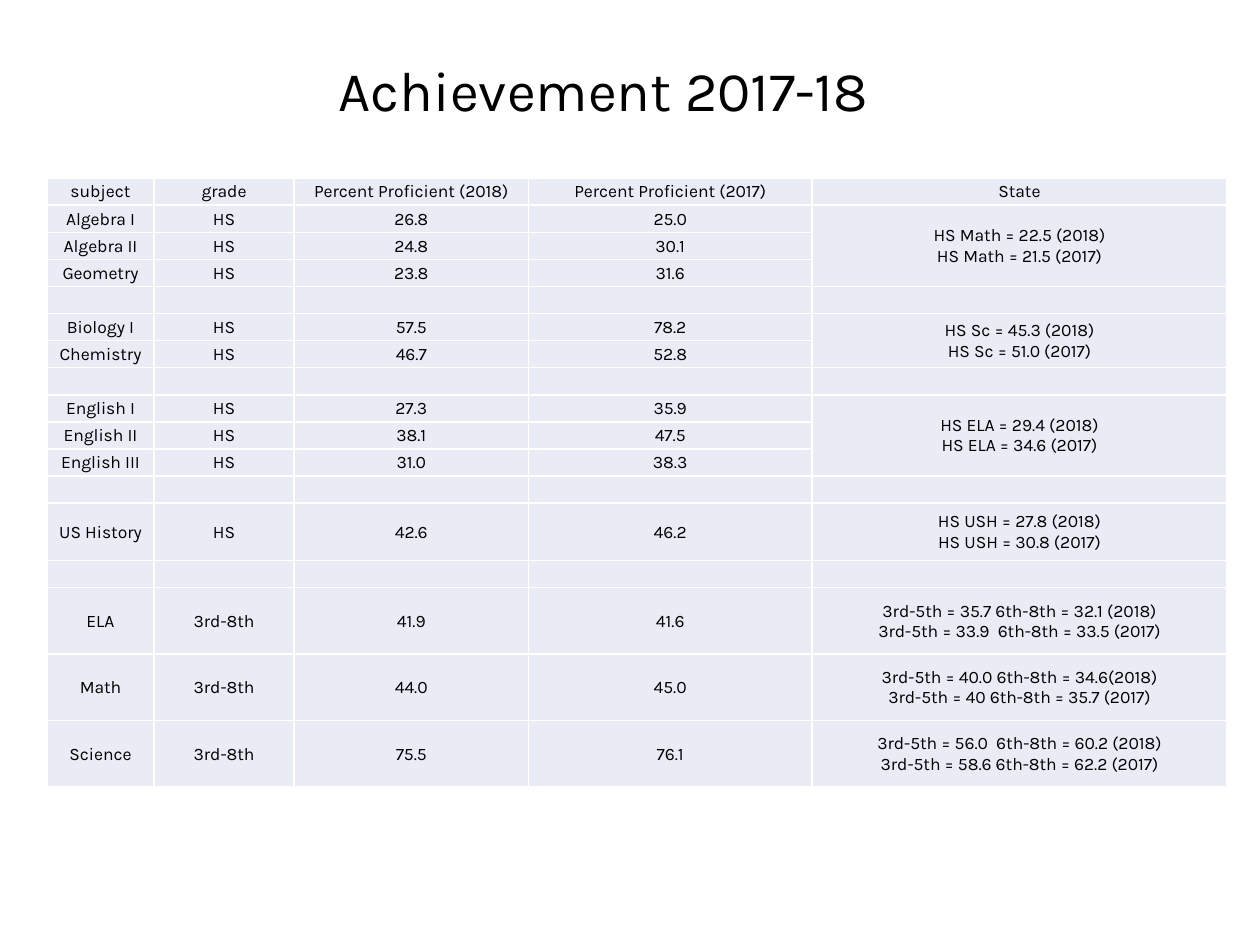
from copy import deepcopy
from dataclasses import dataclass

from lxml.etree import SubElement
from pptx import Presentation
from pptx.dml.color import RGBColor
from pptx.enum.text import MSO_ANCHOR, PP_ALIGN
from pptx.oxml.ns import qn
from pptx.util import Cm, Pt

COLORS = {"text": "000000", "cell": "E9EBF5", "border": "FFFFFF"}
FONT = "Karla"
LINE_H = 7.1 / 13  # the 13 single-line rows share 7.1 cm
COL_WIDTHS = [2.15, 2.83, 4.72, 5.72, 8.36]
STATE_COL = 4


@dataclass
class Row:
    subject: str = ""
    grade: str = ""
    pct_2018: str = ""
    pct_2017: str = ""
    state: str = ""
    span: int = 1
    height: float = LINE_H

    def texts(self) -> list[str]:
        return [self.subject, self.grade, self.pct_2018, self.pct_2017, self.state]


GAP = Row()
ROWS = [
    Row("subject", "grade", "Percent Proficient (2018)", "Percent Proficient (2017)", "State"),
    Row("Algebra I", "HS", "26.8", "25.0", "HS Math = 22.5 (2018)\nHS Math = 21.5 (2017)", span=3),
    Row("Algebra II", "HS", "24.8", "30.1"),
    Row("Geometry", "HS", "23.8", "31.6"),
    GAP,
    Row("Biology I", "HS", "57.5", "78.2", "HS Sc = 45.3 (2018)\nHS Sc = 51.0 (2017)", span=2),
    Row("Chemistry", "HS", "46.7", "52.8"),
    GAP,
    Row("English I", "HS", "27.3", "35.9", "HS ELA = 29.4 (2018)\nHS ELA = 34.6 (2017)", span=3),
    Row("English II", "HS", "38.1", "47.5"),
    Row("English III", "HS", "31.0", "38.3"),
    GAP,
    Row("US History", "HS", "42.6", "46.2", "HS USH = 27.8 (2018)\nHS USH = 30.8 (2017)", height=1.16),
    GAP,
    Row("ELA", "3rd-8th", "41.9", "41.6",
        "3rd-5th = 35.7 6th-8th = 32.1 (2018)\n3rd-5th = 33.9  6th-8th = 33.5 (2017)", height=1.34),
    Row("Math", "3rd-8th", "44.0", "45.0",
        "3rd-5th = 40.0 6th-8th = 34.6(2018)\n3rd-5th = 40 6th-8th = 35.7 (2017)", height=1.34),
    Row("Science", "3rd-8th", "75.5", "76.1",
        "3rd-5th = 56.0  6th-8th = 60.2 (2018)\n3rd-5th = 58.6 6th-8th = 62.2 (2017)", height=1.34),
]


def write(p, text: str, size: int) -> None:
    """Fill a centred paragraph, sizing line breaks and empty text like the runs."""
    p.text = text
    p.alignment = PP_ALIGN.CENTER
    for r in p.runs:
        r.font.name = FONT
        r.font.size = Pt(size)
        r.font.color.rgb = RGBColor.from_string(COLORS["text"])
    for br in p._p.findall(qn("a:br")):
        br.append(deepcopy(p.runs[0]._r.rPr))
    if not text:
        SubElement(p._p, qn("a:endParaRPr"), sz=str(size * 100))


def add_borders(cell) -> None:
    tcPr = cell._tc.get_or_add_tcPr()
    for side in ("lnL", "lnR", "lnT", "lnB"):
        ln = SubElement(tcPr, qn(f"a:{side}"), w=str(Pt(1)))
        fill = SubElement(ln, qn("a:solidFill"))
        SubElement(fill, qn("a:srgbClr"), val=COLORS["border"])


def format_cell(cell, text: str) -> None:
    cell.margin_left = cell.margin_right = cell.margin_top = Cm(0.02)
    cell.margin_bottom = 0
    cell.vertical_anchor = MSO_ANCHOR.MIDDLE
    add_borders(cell)
    cell.fill.solid()
    cell.fill.fore_color.rgb = RGBColor.from_string(COLORS["cell"])
    write(cell.text_frame.paragraphs[0], text, 10)


def add_title(s, text: str) -> None:
    sp = s.shapes.title
    sp.left, sp.top, sp.width, sp.height = Cm(1.22), Cm(0.64), Cm(21.9), Cm(2.48)
    tf = sp.text_frame
    tf.vertical_anchor = MSO_ANCHOR.MIDDLE
    write(tf.paragraphs[0], text, 32)
    tf.paragraphs[0].line_spacing = 0.9


def add_results(s, rows: list[Row]) -> None:
    height = sum(row.height for row in rows)
    table = s.shapes.add_table(len(rows), len(COL_WIDTHS), Cm(0.95), Cm(3.59),
                               Cm(sum(COL_WIDTHS)), Cm(height)).table
    table.first_row = table.horz_banding = False
    for col, width in zip(table.columns, COL_WIDTHS):
        col.width = Cm(width)
    for i, row in enumerate(rows):
        table.rows[i].height = Cm(row.height)
        for j, text in enumerate(row.texts()):
            format_cell(table.cell(i, j), text)
    for i, row in enumerate(rows):
        if row.span > 1:
            table.cell(i, STATE_COL).merge(table.cell(i + row.span - 1, STATE_COL))


def main() -> None:
    prs = Presentation()
    prs.slide_width, prs.slide_height = Cm(25.4), Cm(19.05)
    s = prs.slides.add_slide(prs.slide_layouts[5])
    add_title(s, "Achievement 2017-18")
    add_results(s, ROWS)
    prs.save("out.pptx")


if __name__ == "__main__":
    main()
